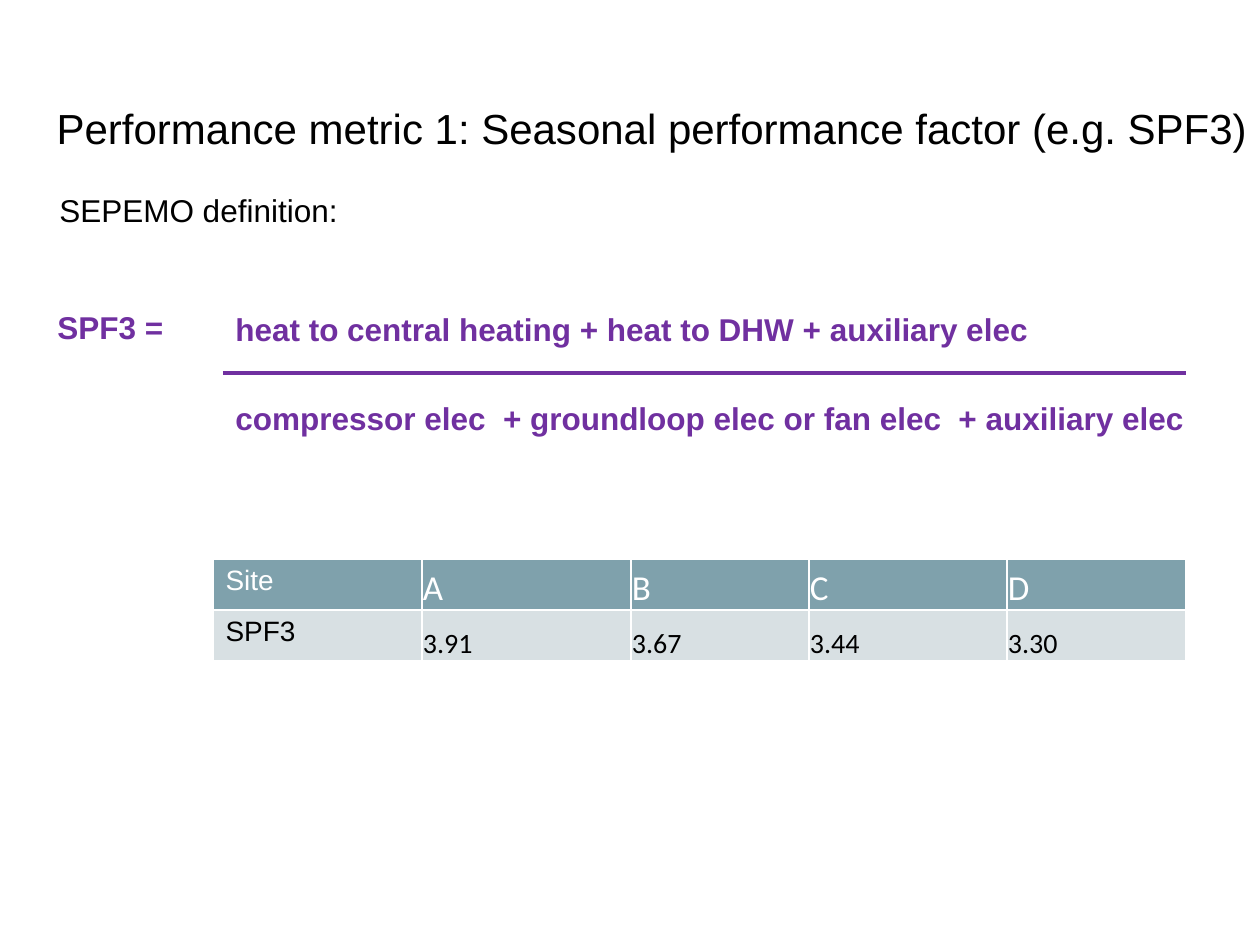
from dataclasses import dataclass

import pptx
import pptx.dml.color
import pptx.enum.shapes
import pptx.enum.text
import pptx.oxml
import pptx.oxml.ns
import pptx.util
from lxml import etree

PX = pptx.util.Inches(1) / 126
ANCHOR = pptx.enum.text.MSO_ANCHOR


@dataclass(frozen=True)
class Theme:
    black: str = "000000"
    white: str = "FFFFFF"
    formula: str = "7030A0"
    header_fill: str = "7FA1AC"
    row_fill: str = "D8E0E3"
    text_font: str = "Arial"
    value_font: str = "Calibri"
    title_size: int = 24
    body_size: int = 18
    label_size: int = 16
    site_size: int = 20


@dataclass(frozen=True)
class Label:
    text: str
    left: int
    top: int
    width: int
    height: int
    color: str
    bold: bool


@dataclass(frozen=True)
class TableRow:
    label: str
    values: tuple[str, ...]
    fill: str
    color: str
    value_size: int


THEME = Theme()

LABELS = (
    Label("SEPEMO definition:", 47, 185, 316, 89, THEME.black, False),
    Label("heat to central heating + heat to DHW + auxiliary elec",
          223, 304, 1201, 50, THEME.formula, True),
    Label("compressor elec  + groundloop elec or fan elec  + auxiliary elec",
          223, 393, 1191, 50, THEME.formula, True),
    Label("SPF3 =", 45, 302, 188, 50, THEME.formula, True),
)

COLUMN_WIDTHS = (209, 209, 178, 198, 179)
ROW_HEIGHT = 51
TABLE_ROWS = (
    TableRow("Site", ("A", "B", "C", "D"),
             THEME.header_fill, THEME.white, THEME.site_size),
    TableRow("SPF3", ("3.91", "3.67", "3.44", "3.30"),
             THEME.row_fill, THEME.black, THEME.label_size),
)


def px(length: int) -> pptx.util.Emu:
    return pptx.util.Emu(round(length * PX))


def rgb(color: str) -> pptx.dml.color.RGBColor:
    return pptx.dml.color.RGBColor.from_string(color)


def write(frame, text: str, *, size: int, color: str = THEME.black,
          font: str = THEME.text_font, bold: bool = False,
          anchor=ANCHOR.TOP) -> None:
    """Put one formatted, left-aligned paragraph in a text frame."""
    frame.word_wrap = True
    frame.vertical_anchor = anchor
    paragraph = frame.paragraphs[0]
    paragraph.alignment = pptx.enum.text.PP_ALIGN.LEFT
    run = paragraph.add_run()
    run.text = text
    run.font.name = font
    run.font.size = pptx.util.Pt(size)
    run.font.bold = bold
    run.font.color.rgb = rgb(color)


def add_title(slide, text: str) -> None:
    title = slide.shapes.title
    title.left, title.top, title.width, title.height = map(px, (44, 96, 1260, 63))
    title.text_frame.auto_size = pptx.enum.text.MSO_AUTO_SIZE.NONE
    write(title.text_frame, text, size=THEME.title_size)


def add_label(slide, label: Label) -> None:
    box = slide.shapes.add_textbox(
        px(label.left), px(label.top), px(label.width), px(label.height))
    write(box.text_frame, label.text, size=THEME.body_size,
          color=label.color, bold=label.bold)


def add_fraction_bar(slide, left: int, right: int, y: int) -> None:
    bar = slide.shapes.add_connector(
        pptx.enum.shapes.MSO_CONNECTOR.STRAIGHT, px(left), px(y), px(right), px(y))
    bar.line.color.rgb = rgb(THEME.formula)
    bar.line.width = pptx.util.Pt(2.25)
    etree.SubElement(bar._element.spPr, pptx.oxml.ns.qn("a:effectLst"))


def style_cell(cell, fill: str) -> None:
    """Fill a cell and give it thin white borders."""
    cell.fill.solid()
    cell.fill.fore_color.rgb = rgb(fill)
    properties = cell._tc.get_or_add_tcPr()
    for position, side in enumerate(("lnL", "lnR", "lnT", "lnB")):
        properties.insert(position, pptx.oxml.parse_xml(
            f'<a:{side} {pptx.oxml.ns.nsdecls("a")} w="{pptx.util.Pt(1)}">'
            f'<a:solidFill><a:srgbClr val="{THEME.white}"/></a:solidFill>'
            f'</a:{side}>'))


def add_site_table(slide, left: int, top: int) -> None:
    table = slide.shapes.add_table(
        len(TABLE_ROWS), len(COLUMN_WIDTHS), px(left), px(top),
        px(sum(COLUMN_WIDTHS)), px(ROW_HEIGHT * len(TABLE_ROWS))).table
    for column, width in zip(table.columns, COLUMN_WIDTHS):
        column.width = px(width)
    for index, row in enumerate(TABLE_ROWS):
        table.rows[index].height = px(ROW_HEIGHT)
        label_cell, *value_cells = table.rows[index].cells
        style_cell(label_cell, row.fill)
        write(label_cell.text_frame, row.label,
              size=THEME.label_size, color=row.color)
        for cell, value in zip(value_cells, row.values):
            style_cell(cell, row.fill)
            cell.margin_left = cell.margin_right = cell.margin_top = px(1)
            cell.margin_bottom = 0
            write(cell.text_frame, value, size=row.value_size, color=row.color,
                  font=THEME.value_font)
            cell.vertical_anchor = ANCHOR.BOTTOM


def main() -> None:
    deck = pptx.Presentation()
    deck.slide_width, deck.slide_height = px(1260), px(945)
    slide = deck.slides.add_slide(deck.slide_layouts[5])

    # Results by site
    add_site_table(slide, 213, 559)

    # Heading, definition and formula
    add_title(slide, "Performance metric 1: Seasonal performance factor (e.g. SPF3)")
    for label in LABELS:
        add_label(slide, label)
    add_fraction_bar(slide, 223, 1186, 373)

    deck.save("out.pptx")


if __name__ == "__main__":
    main()
